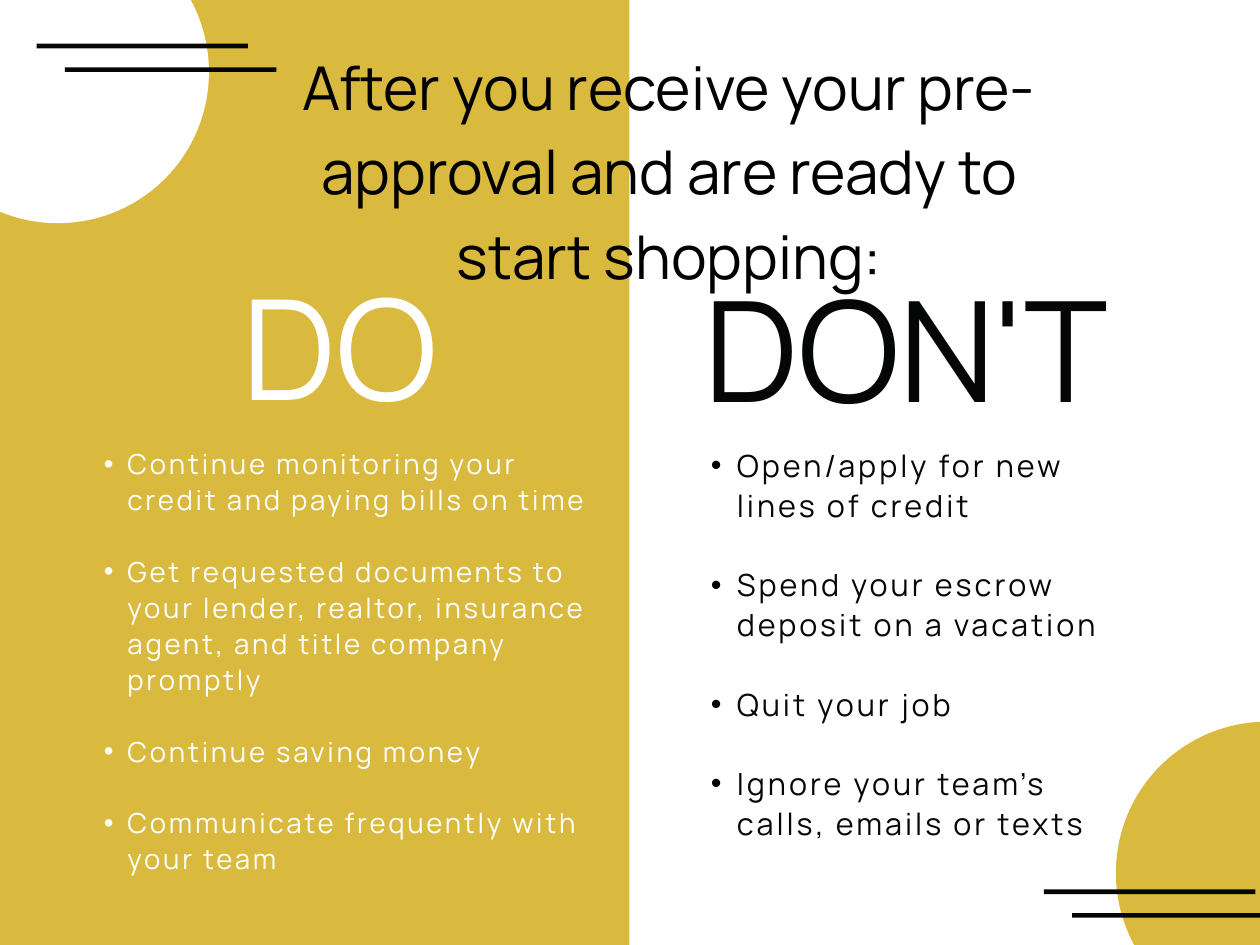
import pptx
import pptx.util
import pptx.dml.color
import pptx.enum.shapes
import pptx.enum.text
import pptx.oxml.ns
import lxml.etree

Inches = pptx.util.Inches
Pt = pptx.util.Pt
SHAPES = pptx.enum.shapes.MSO_SHAPE

GOLD, WHITE, INK, BLACK = "D9B93E", "FFFFFF", "050707", "000000"
FONT = "Manrope"

DO_ITEMS = [
    "Continue monitoring your credit and paying bills on time",
    "Get requested documents to your lender, realtor, insurance agent, "
    "and title company promptly",
    "Continue saving money",
    "Communicate frequently with your team",
]
DONT_ITEMS = [
    "Open/apply for new lines of credit",
    "Spend your escrow deposit on a vacation",
    "Quit your job",
    "Ignore your team's calls, emails or texts",
]


def set_color(color_format, color):
    color_format.rgb = pptx.dml.color.RGBColor.from_string(color)


def add_block(slide, kind, left, top, width, height, color):
    shape = slide.shapes.add_shape(
        kind, Inches(left), Inches(top), Inches(width), Inches(height))
    shape.shadow.inherit = False
    shape.fill.solid()
    set_color(shape.fill.fore_color, color)
    shape.line.fill.background()


def add_corner(slide, circle_left, circle_top, color, bar_left, bar_top):
    """A circle cut by the slide corner, under two staggered bars."""
    add_block(slide, SHAPES.OVAL, circle_left, circle_top, 2.56, 2.56, color)
    for step in range(2):
        add_block(slide, SHAPES.RECTANGLE, bar_left + 0.24 * step,
                  bar_top + 0.2 * step, 1.79, 0.04, INK)


def prepare_frame(shape):
    frame = shape.text_frame
    frame.margin_left = frame.margin_right = 0
    frame.margin_top = frame.margin_bottom = 0
    frame.word_wrap = True
    frame.auto_size = pptx.enum.text.MSO_AUTO_SIZE.NONE
    frame.vertical_anchor = pptx.enum.text.MSO_ANCHOR.TOP
    return frame


def add_frame(slide, left, top, width, height):
    return prepare_frame(slide.shapes.add_textbox(
        Inches(left), Inches(top), Inches(width), Inches(height)))


def format_paragraph(paragraph, size, line_spacing, color, centered=True):
    alignment = pptx.enum.text.PP_ALIGN
    paragraph.alignment = alignment.CENTER if centered else alignment.LEFT
    paragraph.line_spacing = Pt(line_spacing)
    for run in paragraph.runs:
        run.font.name = FONT
        run.font.size = Pt(size)
        set_color(run.font.color, color)


def add_heading(slide, text, left, top, width, size, line_spacing, color):
    frame = add_frame(slide, left, top, width, 1.35)
    frame.text = text
    format_paragraph(frame.paragraphs[0], size, line_spacing, color)


def add_bullet_mark(paragraph, indent):
    properties = paragraph._p.get_or_add_pPr()
    properties.set("marL", str(Inches(2 * indent)))
    properties.set("indent", str(-Inches(indent)))
    for tag, name, value in (("a:buFont", "typeface", "Arial"),
                             ("a:buChar", "char", "•")):
        element = lxml.etree.SubElement(properties, pptx.oxml.ns.qn(tag))
        element.set(name, value)


def add_bullets(slide, items, left, width, height, size, line_spacing,
                indent, tracking, color):
    frame = add_frame(slide, left, 3.76, width, height)
    frame.text = "\n".join(items)
    for index, paragraph in enumerate(frame.paragraphs):
        format_paragraph(paragraph, size, line_spacing, color, centered=False)
        paragraph.space_before = Pt(line_spacing if index else 0)
        add_bullet_mark(paragraph, indent)
        for run in paragraph.runs:
            run.font._element.set("spc", str(round(tracking * 100)))


def place_title(slide, text):
    title = slide.shapes.title
    title.left, title.top = Inches(2.35), Inches(0.32)
    title.width, title.height = Inches(6.64), Inches(2.11)
    frame = prepare_frame(title)
    frame.text = text
    format_paragraph(frame.paragraphs[0], 36.8, 51.5, BLACK)
    # Bring the title in front of the colored panel
    slide.shapes.element.append(title.element)


def main():
    presentation = pptx.Presentation()
    presentation.slide_width = Inches(10.67)
    presentation.slide_height = Inches(8)
    slide = presentation.slides.add_slide(presentation.slide_layouts[5])

    # Gold panel and corner decorations
    add_block(slide, SHAPES.RECTANGLE, -0.14, -0.03, 5.47, 8.04, GOLD)
    add_corner(slide, 9.45, 6.11, GOLD, 8.84, 7.53)
    add_corner(slide, -0.79, -0.67, WHITE, 0.31, 0.37)

    # Do column
    add_heading(slide, "DO", 0.68, 2.33, 4.4, 85, 93.5, WHITE)
    add_bullets(slide, DO_ITEMS, 0.68, 4.4, 3.83, 16.8, 21.9, 0.2, 1.67, WHITE)

    # Don't column
    add_heading(slide, "DON'T", 5.8, 2.34, 3.75, 85.3, 93.8, INK)
    add_bullets(slide, DONT_ITEMS, 5.8, 3.75, 3.66, 18.6, 24.2, 0.22, 1.85, INK)

    place_title(slide, "After you receive your pre-approval and are ready "
                       "to start shopping:")
    presentation.save("out.pptx")


if __name__ == "__main__":
    main()
